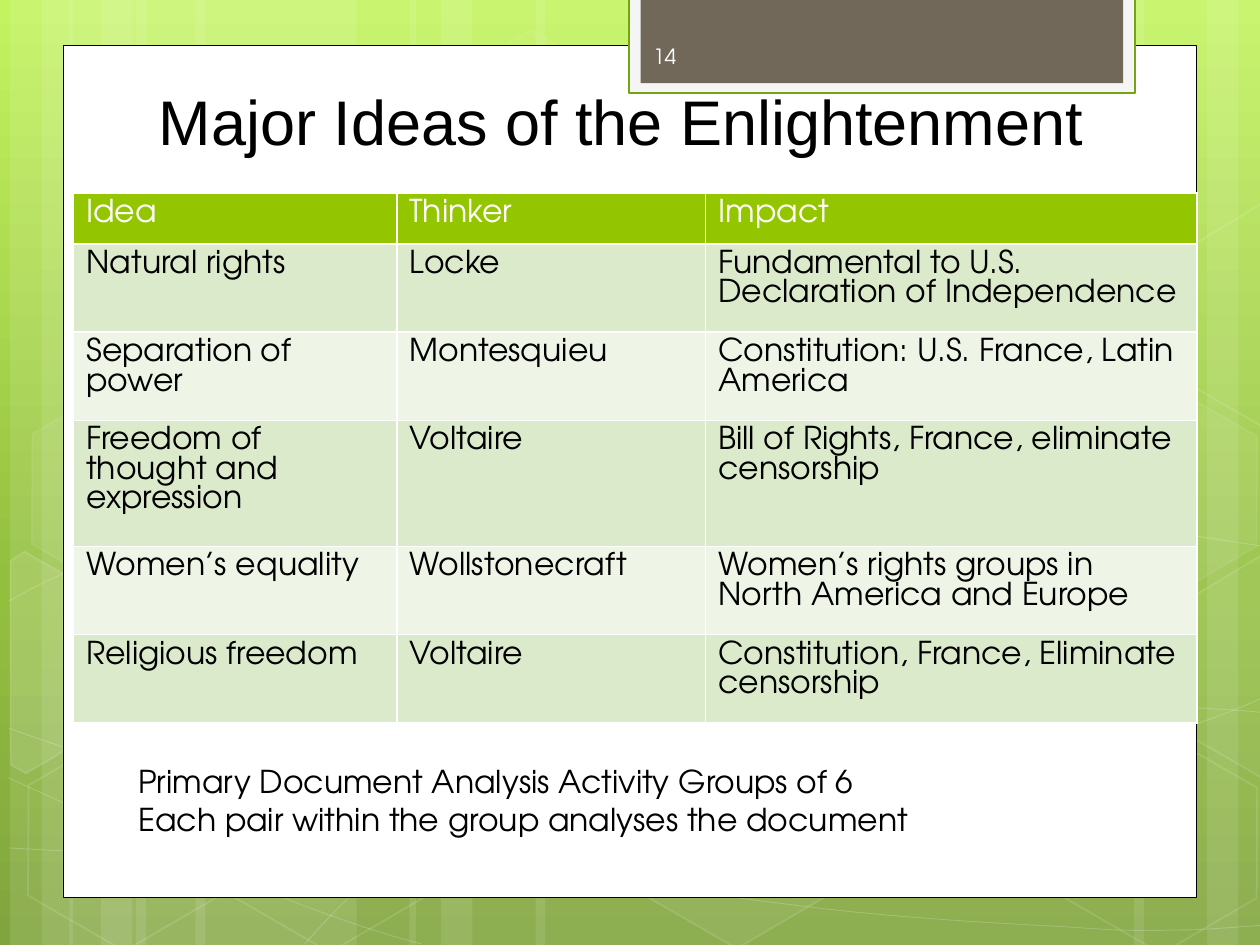
from copy import deepcopy
from lxml.etree import SubElement
from pptx import Presentation
from pptx.dml.color import RGBColor
from pptx.enum.shapes import MSO_SHAPE
from pptx.enum.text import MSO_ANCHOR, PP_ALIGN
from pptx.oxml.ns import qn
from pptx.util import Emu, Inches, Pt

WHITE, BLACK, GREEN = "FFFFFF", "000000", "94C600"
FONT = "TeX Gyre Adventor"
COLS, ROWS = 100, 75  # square grid units across and down the slide
TILT = 30  # turn of every hexagon, in degrees


def paint(fill, color, alpha=None):
    """Fill with a hex colour, at an opacity in percent; None clears it."""
    if color is None:
        fill.background()
        return
    fill.solid()
    fill.fore_color.rgb = RGBColor.from_string(color)
    if alpha is not None:
        tone = fill._xPr.find(qn("a:solidFill"))[0]
        SubElement(tone, qn("a:alpha"), val=str(alpha * 1000))


def write(frame, *lines, size=18, font=FONT, color=BLACK,
          align=PP_ALIGN.LEFT, anchor=MSO_ANCHOR.TOP):
    frame.word_wrap = True
    frame.vertical_anchor = anchor
    for i, line in enumerate(lines):
        par = frame.add_paragraph() if i else frame.paragraphs[0]
        par.alignment = align
        run = par.add_run()
        run.text = line
        run.font.size, run.font.name = Pt(size), font
        run.font.color.rgb = RGBColor.from_string(color)


class Deck:
    def __init__(self):
        self.prs = Presentation()
        self.prs.slide_width, self.prs.slide_height = Inches(10), Inches(7.5)
        self.unit = self.prs.slide_width / COLS
        self.slide = self.prs.slides.add_slide(self.prs.slide_layouts[6])
        self.shapes = self.slide.shapes

    def span(self, *units):
        return [Emu(round(n * self.unit)) for n in units]

    def dress(self, shape, fill, alpha, line, width, fade):
        shape.shadow.inherit = False
        paint(shape.fill, fill, alpha)
        paint(shape.line.fill, line, fade)
        if line:
            shape.line.width = Pt(width)

    def backdrop(self, stops):
        fill = self.slide.background.fill
        fill.gradient()
        fill.gradient_angle = 270
        gradient = self.slide.element.find(".//" + qn("a:gsLst"))
        gradient.append(deepcopy(gradient[-1]))
        for stop, (place, color) in zip(fill.gradient_stops, stops):
            stop.position = place
            stop.color.rgb = RGBColor.from_string(color)

    def shape(self, *box, kind=MSO_SHAPE.RECTANGLE, fill=None, alpha=None,
              line=None, width=1, fade=None):
        shape = self.shapes.add_shape(kind, *self.span(*box))
        self.dress(shape, fill, alpha, line, width, fade)
        return shape

    def hexagon(self, x, y, alpha=None, fade=12):
        hexa = self.shape(x, y, 17.5, 15.2, kind=MSO_SHAPE.HEXAGON,
                          fill=alpha and WHITE, alpha=alpha,
                          line=WHITE, fade=fade)
        hexa.adjustments[0] = 0.285
        hexa.rotation = TILT

    def outline(self, points, close=False, alpha=None, width=1, fade=12):
        first, *rest = [self.span(*p) for p in points]
        pen = self.shapes.build_freeform(*first)
        pen.add_line_segments(rest, close=close)
        shape = pen.convert_to_shape()
        self.dress(shape, alpha and WHITE, alpha, WHITE, width, fade)
        return shape

    def cut(self, x, y, points, alpha=None):
        """A hexagon trimmed by the slide's edge."""
        moved = [(x + dx, y + dy) for dx, dy in points]
        self.outline(moved, close=True, alpha=alpha).rotation = TILT

    def curve(self, points):
        """Join the points, three by three, into cubic curves."""
        shape = self.outline(points, width=0.5, fade=20)
        route = shape.element.find(".//" + qn("a:path"))
        for i, step in enumerate(route.findall(qn("a:lnTo"))):
            if i % 3 == 0:
                bend = SubElement(route, qn("a:cubicBezTo"))
            bend.append(step[0])
            route.remove(step)

    def text(self, box, *lines, **style):
        write(self.shapes.add_textbox(*self.span(*box)).text_frame,
              *lines, **style)

    def border(self, cell):
        props = cell._tc.get_or_add_tcPr()
        for side in "LRTB":
            edge = SubElement(props, qn("a:ln" + side), w=str(Pt(1)))
            tone = SubElement(edge, qn("a:solidFill"))
            SubElement(tone, qn("a:srgbClr"), val=WHITE)

    def table(self, x, y, widths, heights, data):
        box = self.span(x, y, sum(widths), sum(heights))
        table = self.shapes.add_table(len(data), len(widths), *box).table
        table.horz_banding = False
        for col, width in zip(table.columns, self.span(*widths)):
            col.width = width
        for row, height in zip(table.rows, self.span(*heights)):
            row.height = height
        for r, line in enumerate(data):
            tint = ("DCEACC" if r % 2 else "EEF5E7") if r else GREEN
            for c, words in enumerate(line):
                cell = table.cell(r, c)
                self.border(cell)
                paint(cell.fill, tint)
                write(cell.text_frame, words, color=BLACK if r else WHITE)


# x and width of the pale upright bands
BANDS = [(10.8, 17.5), (0.8, 5), (3.3, 8.3), (15.5, 17.5), (5.5, 5), (8, 8.3),
         (73.3, 17.5), (95.8, 5), (90, 8.3), (42.5, 30.8), (32.5, 5), (35, 8.3)]
# control points of the thin curves
CURVES = [
    [(0.7, 67.3), (6.1, 67.6), (11.5, 67.9), (19, 67.8), (26.5, 67.7),
     (35.8, 67.5), (45.8, 66.5), (55.8, 65.5), (70, 63.6), (79.2, 61.7),
     (88.3, 59.8), (97.7, 56.8), (100.7, 55.1)],
    [(0.7, 47.7), (3.6, 46.1), (6.5, 44.6), (12.1, 43.1), (17.8, 41.6),
     (25.9, 39.4), (34.7, 38.7), (43.6, 38), (54.4, 37.9), (65.4, 38.7),
     (76.4, 39.5), (94.7, 42.6), (100.7, 43.4)],
    [(0.6, 61.7), (12.7, 67.2), (24.7, 72.7), (33.4, 74.9)],
    [(0.7, 57.8), (3.8, 58.9), (7, 60), (12.8, 61.6), (18.6, 63.1),
     (27.3, 65.6), (35.7, 67.3), (44, 69), (54.5, 70.8), (62.8, 71.8),
     (71.1, 72.9), (80, 73.3), (85.3, 73.6), (90.5, 74), (91.9, 73.8),
     (94.5, 73.8), (97.1, 73.7), (98.9, 73.5), (100.7, 73.4)],
    [(24.2, 74.9), (26, 72.9), (27.8, 70.9), (30.2, 69.1), (32.6, 67.3),
     (36, 65.3), (38.8, 63.9), (41.6, 62.5), (43.3, 61.9), (47, 60.9),
     (50.6, 59.9), (57.3, 58.5), (60.8, 57.8), (64.4, 57.1), (64.9, 57.1),
     (68, 56.9), (71.1, 56.6), (76, 56.3), (79.4, 56.2), (82.9, 56.1),
     (88.6, 56.2), (88.6, 56.2), (88.6, 56.2), (95.3, 56.2), (95.3, 56.2),
     (97.1, 56.3), (98.8, 56.4), (99.7, 56.5), (100.6, 56.6), (100.3, 56.5),
     (100.6, 56.6)],
]
# x, y, fill opacity, line opacity
HEXAGONS = [(33.4, 3.6, 4, 8), (49.7, 58.9, 6, 12), (1.1, 59.1, None, 12),
            (1.4, 31.2, 7, 8), (17.4, 59.2, None, 12), (75.3, 45.3, 10, 12),
            (83.4, 59.3, None, 12), (83.4, 31.4, 7, 8)]
# corners before the tilt
LEFT_CUT = [(0, 1.2), (0.6, 0), (9.4, 0), (13.8, 7.7), (9.5, 15.2),
            (8.1, 15.2)]
RIGHT_CUT = [(0, 7.6), (4.2, 0), (5.1, 0), (13.6, 14.5), (13.2, 15.2),
             (4.3, 15.2)]
IDEAS = [
    ("Idea", "Thinker", "Impact"),
    ("Natural rights", "Locke",
     "Fundamental to U.S. Declaration of Independence"),
    ("Separation of power", "Montesquieu",
     "Constitution: U.S. France, Latin America"),
    ("Freedom of thought and expression", "Voltaire",
     "Bill of Rights, France, eliminate censorship"),
    ("Women’s equality", "Wollstonecraft",
     "Women’s rights groups in North America and Europe"),
    ("Religious freedom", "Voltaire",
     "Constitution, France, Eliminate censorship"),
]


def main():
    deck = Deck()
    # Backdrop
    deck.backdrop([(0, "C3F35F"), (0.62, "93BF3F"), (1, "81A53E")])
    for x, width in BANDS:
        deck.shape(x, 0, width, ROWS, fill=WHITE, alpha=10)
    for points in CURVES:
        deck.curve(points)
    for hexa in HEXAGONS:
        deck.hexagon(*hexa)
    deck.cut(-3.3, 45.9, LEFT_CUT, alpha=10)
    deck.cut(91.7, 44.4, RIGHT_CUT, alpha=4)
    deck.cut(91.7, 16.5, RIGHT_CUT)
    # White page and number tab
    deck.shape(5, 3.6, 90, 67.65, fill=WHITE, line=BLACK, width=0.5)
    deck.shape(49.9, -0.2, 40.2, 7.6, fill="F5F5F5", line="74A510", width=1.25)
    deck.shape(50.85, -0.2, 38.3, 6.8, fill="71685A")
    # Title, table and notes
    deck.text((5.85, 6.05, 88.3, 7.1), "Major Ideas of the Enlightenment ",
              size=36, font="Arial", align=PP_ALIGN.CENTER)
    deck.table(5.85, 15.3, (25.65, 24.5, 39), (4.05, 7, 7, 10, 7, 7), IDEAS)
    deck.text((50.85, 2.45, 14.6, 4), "14", size=12, color="FEFEFE",
              anchor=MSO_ANCHOR.MIDDLE)
    deck.text((10, 60, 80, 7.1),
              "Primary Document Analysis Activity Groups of 6",
              "Each pair within the group analyses the document")
    deck.prs.save("out.pptx")


if __name__ == "__main__":
    main()
